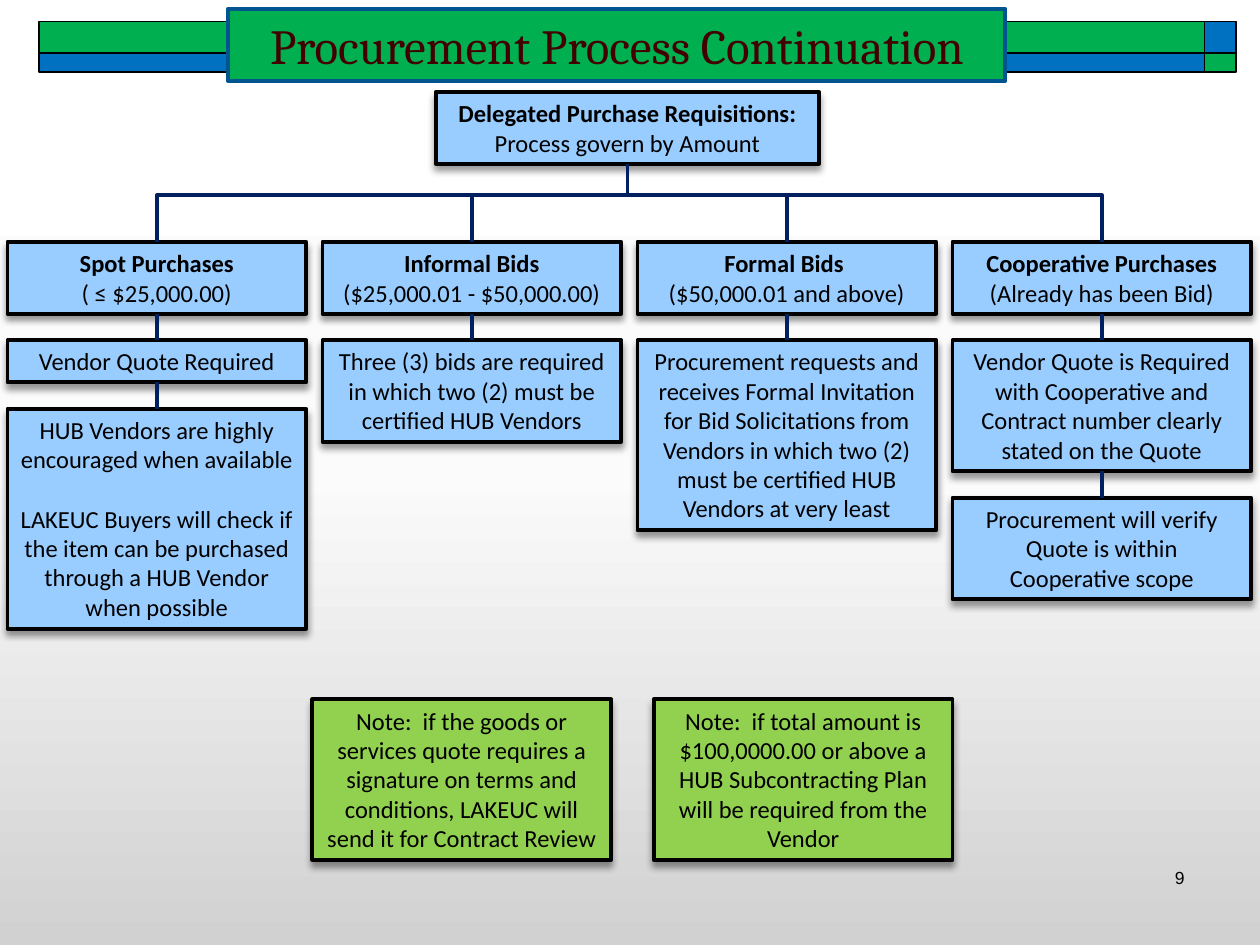
import copy
import pptx
import pptx.dml.color
import pptx.enum.shapes
import pptx.enum.text
import pptx.oxml
import pptx.oxml.ns
import pptx.util

W, H = 10, 7.5
COL_LEFT, COL_PITCH, BOX_W = 0.06, 2.5, 2.37
LINE_H, PAD, GAP = 0.235, 0.1, 0.21
ROOT_TOP, TREE_TOP, NOTE_TOP = 0.73, 1.92, 5.55
BLUE, LIME, GREEN, NAVY = "99CCFF", "92D050", "00B050", "002060"
CENTER = pptx.enum.text.PP_ALIGN.CENTER
RECT = pptx.enum.shapes.MSO_SHAPE.RECTANGLE
KIND = pptx.enum.shapes.MSO_CONNECTOR
qn = pptx.oxml.ns.qn

# Each column: (lines tall, paragraphs); the first box has a bold heading
COLUMNS = [
    [(2, ["Spot Purchases", "( ≤ $25,000.00)"]),
     (1, ["Vendor Quote Required"]),
     (7, ["HUB Vendors are highly encouraged when available",
          "LAKEUC Buyers will check if the item can be purchased through "
          "a HUB Vendor when possible"])],
    [(2, ["Informal Bids", "($25,000.01 - $50,000.00)"]),
     (3, ["Three (3) bids are required in which two (2) must be "
          "certified HUB Vendors"])],
    [(2, ["Formal Bids ", "($50,000.01 and above)"]),
     (6, ["Procurement requests and receives Formal Invitation for Bid "
          "Solicitations from Vendors in which two (2) must be certified "
          "HUB Vendors at very least"])],
    [(2, ["Cooperative Purchases", "(Already has been Bid)"]),
     (4, ["Vendor Quote is Required with Cooperative and Contract number "
          "clearly stated on the Quote"]),
     (3, ["Procurement will verify Quote is within Cooperative scope"])],
]
NOTES = [
    (2.48, "Note:  if the goods or services quote requires a signature on terms "
           "and conditions, LAKEUC will send it for Contract Review"),
    (5.19, "Note:  if total amount is $100,0000.00 or above a HUB Subcontracting "
           "Plan will be required from the Vendor"),
]


def rgb(value):
    return pptx.dml.color.RGBColor.from_string(value)


def inches(*values):
    return [pptx.util.Inches(v) for v in values]


def style(sp, fill, line, width):
    sp.fill.solid()
    sp.fill.fore_color.rgb = rgb(fill)
    sp.line.color.rgb = rgb(line)
    sp.line.width = pptx.util.Pt(width)


def set_font(p, name, size, color, bold=False):
    p.font.name, p.font.size, p.font.bold = name, pptx.util.Pt(size), bold
    p.font.color.rgb = rgb(color)


def add_effects(sp, inner=""):
    ns = pptx.oxml.ns.nsdecls("a")
    xml = f"<a:effectLst {ns}>{inner}</a:effectLst>"
    sp.element.spPr.append(pptx.oxml.parse_xml(xml))


def paint_background(s):
    fill = s.background.fill
    fill.gradient()
    fill.gradient_angle = 270
    stop_list = s.element.find(".//" + qn("a:gsLst"))
    stop_list.append(copy.deepcopy(stop_list[0]))
    stops = [(0, "FFFFFF"), (0.5, "FBFBFB"), (1, "D1D1D1")]
    for stop, (position, color) in zip(fill.gradient_stops, stops):
        stop.position = position
        stop.color.rgb = rgb(color)


def add_header(s, left, top):
    """Two-row band with square ends, and the title across it."""
    y = top
    for height, colors in [(0.25, (GREEN, "0070C0")), (0.15, ("0070C0", GREEN))]:
        for x, width, color in zip((left, left + 9.25), (9.25, 0.25), colors):
            bar = s.shapes.add_shape(RECT, *inches(x, y, width, height))
            bar.shadow.inherit = False
            style(bar, color, "000000", 1)
        y += height

    title = s.shapes.title
    s.shapes.element.append(title.element)  # in front of the band
    title.left, title.top, title.width, title.height = inches(1.81, 0.07, 6.17, 0.57)
    style(title, GREEN, "005490", 2.25)
    tf = title.text_frame
    tf.text = "Procurement Process Continuation"
    tf.vertical_anchor = pptx.enum.text.MSO_ANCHOR.BOTTOM
    tf.auto_size = pptx.enum.text.MSO_AUTO_SIZE.NONE
    p = tf.paragraphs[0]
    p.alignment = CENTER
    set_font(p, "Cambria", 28, "420000")


def add_box(s, left, top, width, lines, paragraphs, fill=BLUE, heading=False):
    box = s.shapes.add_shape(RECT, *inches(left, top, width, PAD + lines * LINE_H))
    style(box, fill, "000000", 2.25)
    add_effects(box, '<a:outerShdw blurRad="50800" dist="38100" dir="5400000" '
                     'algn="t" rotWithShape="0"><a:srgbClr val="000000">'
                     '<a:alpha val="40000"/></a:srgbClr></a:outerShdw>')
    tf = box.text_frame
    tf.word_wrap = True
    tf.auto_size = pptx.enum.text.MSO_AUTO_SIZE.SHAPE_TO_FIT_TEXT
    tf.vertical_anchor = pptx.enum.text.MSO_ANCHOR.TOP
    for i, text in enumerate(paragraphs):
        p = tf.add_paragraph() if i else tf.paragraphs[0]
        p.text = text
        p.alignment = CENTER
        set_font(p, "Calibri", 14, "000000", heading and i == 0)
        if i and not heading:
            p.space_before = pptx.util.Pt(17)
    return box


def connect(s, upper, lower, kind=KIND.STRAIGHT):
    c = s.shapes.add_connector(kind, 0, 0, 0, 0)
    c.begin_connect(upper, 2)
    c.end_connect(lower, 0)
    c.line.color.rgb = rgb(NAVY)
    c.line.width = pptx.util.Pt(2.25)
    add_effects(c)
    return c


def branch(s, root, child):
    """Elbow leaving the root downwards: a quarter turn of the sideways elbow."""
    c = connect(s, root, child, KIND.ELBOW)
    to_right = c.end_x > c.begin_x
    mid_x, mid_y = (c.begin_x + c.end_x) // 2, (c.begin_y + c.end_y) // 2
    c.width, c.height = c.height, c.width
    c.left, c.top = mid_x - c.width // 2, mid_y - c.height // 2
    xfrm = c.element.spPr.find(qn("a:xfrm"))
    xfrm.set("rot", "16200000" if to_right else "5400000")
    xfrm.set("flipH", "1" if to_right else "0")
    geometry = c.element.spPr.find(qn("a:prstGeom"))
    guides = geometry.find(qn("a:avLst"))
    guide = guides.makeelement(qn("a:gd"), {"name": "adj1", "fmla": "val 40400"})
    guides.append(guide)


def add_column(s, left, top, items):
    boxes = []
    for i, (lines, paragraphs) in enumerate(items):
        boxes.append(add_box(s, left, top, BOX_W, lines, paragraphs, heading=i == 0))
        top += PAD + lines * LINE_H + GAP
    for upper, lower in zip(boxes, boxes[1:]):
        connect(s, upper, lower)
    return boxes[0]


def add_tree(s):
    root = add_box(s, 3.46, ROOT_TOP, 3.04, 2,
                   ["Delegated Purchase Requisitions:", "Process govern by Amount"],
                   heading=True)
    for i, items in enumerate(COLUMNS):
        branch(s, root, add_column(s, COL_LEFT + i * COL_PITCH, TREE_TOP, items))


def add_page_number(s, left, top, width, height):
    tf = s.shapes.add_textbox(*inches(left, top, width, height)).text_frame
    tf.word_wrap = True
    p = tf.paragraphs[0]
    p.text = "9"
    p.alignment = pptx.enum.text.PP_ALIGN.RIGHT
    set_font(p, "Arial", 10, "000000")


def main():
    prs = pptx.Presentation()
    prs.slide_width, prs.slide_height = inches(W, H)
    s = prs.slides.add_slide(prs.slide_layouts[5])
    paint_background(s)
    add_header(s, 0.31, 0.17)
    add_page_number(s, 7.42, 6.83, 2.08, 0.5)
    add_tree(s)
    for left, text in NOTES:
        add_box(s, left, NOTE_TOP, BOX_W, 5, [text], LIME)
    prs.save("out.pptx")


if __name__ == "__main__":
    main()
